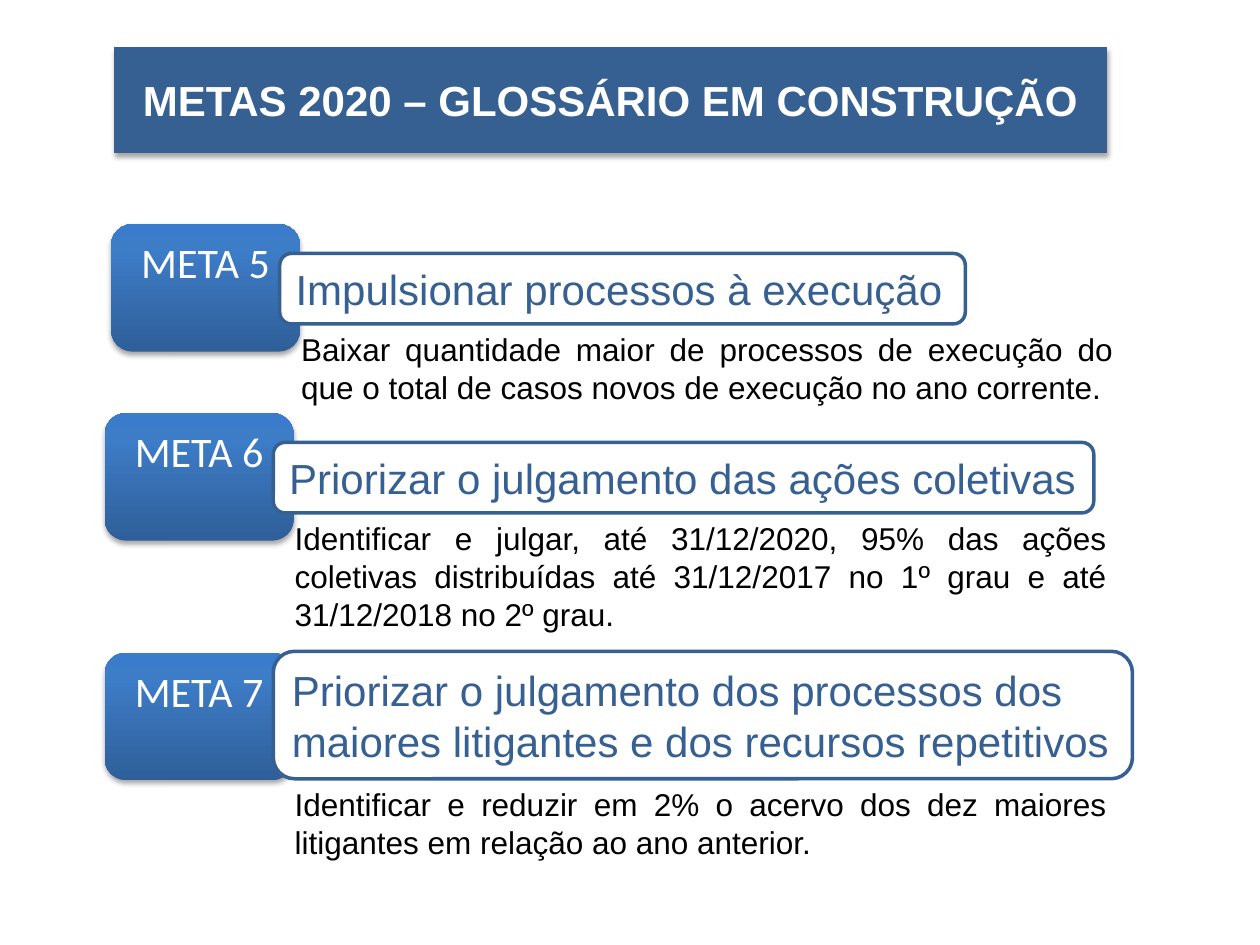
"""Build the 2020 goals glossary slide."""
from dataclasses import dataclass

from lxml.etree import SubElement
from pptx import Presentation
from pptx.dml.color import RGBColor
from pptx.enum.shapes import MSO_SHAPE
from pptx.enum.text import MSO_ANCHOR, MSO_AUTO_SIZE, PP_ALIGN
from pptx.oxml.ns import qn
from pptx.util import Cm, Pt

COLORS = {
    "navy": "376092",
    "white": "FFFFFF",
    "black": "000000",
    "badge_dark": "2F5F99",
    "badge_mid": "3D7CC7",
    "badge_light": "3A7CCB",
}
GRADIENT = ((0, "badge_dark"), (80, "badge_mid"), (100, "badge_light"))
BADGE_WIDTH, BADGE_HEIGHT = 3.81, 2.57
HEADING_INDENT, DETAIL_INDENT = 3.4, 3.58
DETAIL_WIDTH = 16.87


@dataclass(frozen=True)
class Goal:
    label: str
    heading: str
    detail: str
    left: float
    badge_top: float
    heading_top: float
    heading_width: float
    heading_height: float
    detail_height: float


GOALS = (
    Goal("META 5", "Impulsionar processos à execução",
         "Baixar quantidade maior de processos de execução do que o total "
         "de casos novos de execução no ano corrente.",
         2.24, 4.52, 5.11, 13.82, 1.42, 1.8),
    Goal("META 6", "Priorizar o julgamento das ações coletivas",
         "Identificar e julgar, até 31/12/2020, 95% das ações coletivas "
         "distribuídas até 31/12/2017 no 1º grau e até 31/12/2018 no 2º grau.",
         2.11, 8.33, 8.92, 16.54, 1.42, 2.57),
    Goal("META 7",
         "Priorizar o julgamento dos processos dos\n"
         "maiores litigantes e dos recursos repetitivos",
         "Identificar e reduzir em 2% o acervo dos dez maiores litigantes "
         "em relação ao ano anterior.",
         2.11, 13.16, 13.13, 17.32, 2.57, 1.8),
)


def rgb(name: str) -> RGBColor:
    return RGBColor.from_string(COLORS[name])


def write(box, text: str, *, color: str, size: float = 24, font: str = "Arial",
          bold: bool = False, align=PP_ALIGN.LEFT, anchor=MSO_ANCHOR.TOP,
          wrap: bool = True, fit=MSO_AUTO_SIZE.SHAPE_TO_FIT_TEXT) -> None:
    frame = box.text_frame
    frame.text = text
    frame.word_wrap = wrap
    frame.auto_size = fit
    frame.vertical_anchor = anchor
    for paragraph in frame.paragraphs:
        paragraph.alignment = align
        for span in paragraph.runs:
            span.font.name = font
            span.font.size = Pt(size)
            span.font.bold = bold
            span.font.color.rgb = rgb(color)


def paint(box, *, fill: str, line: str, width: float) -> None:
    box.fill.solid()
    box.fill.fore_color.rgb = rgb(fill)
    box.line.color.rgb = rgb(line)
    box.line.width = Pt(width)


def add_color(parent, name: str):
    return SubElement(parent, qn("a:srgbClr"), val=COLORS[name])


def cast_shadow(box) -> None:
    box.shadow.inherit = False
    effects = box.element.spPr.find(qn("a:effectLst"))
    shadow = SubElement(effects, qn("a:outerShdw"), blurRad=str(Pt(3.1)),
                        dist=str(Pt(1.8)), dir="5400000", rotWithShape="0")
    SubElement(add_color(shadow, "black"), qn("a:alpha"), val="35000")


def shade(box) -> None:
    box.fill.gradient()
    box.fill.gradient_angle = 90
    stops = box.element.spPr.find(qn("a:gradFill")).find(qn("a:gsLst"))
    for stop in list(stops):
        stops.remove(stop)
    for position, name in GRADIENT:
        add_color(SubElement(stops, qn("a:gs"), pos=str(position * 1000)), name)


def add_rounded(page, left: float, top: float, width: float, height: float):
    box = page.shapes.add_shape(MSO_SHAPE.ROUNDED_RECTANGLE,
                                Cm(left), Cm(top), Cm(width), Cm(height))
    box.shadow.inherit = False
    return box


def add_title(page, text: str) -> None:
    box = page.shapes.title
    box.left, box.top, box.width, box.height = Cm(2.31), Cm(1.3), Cm(19.99), Cm(1.42)
    geometry = SubElement(box.element.spPr, qn("a:prstGeom"), prst="roundRect")
    SubElement(geometry, qn("a:avLst"))
    paint(box, fill="navy", line="navy", width=0.75)
    cast_shadow(box)
    write(box, text, color="white", bold=True, align=PP_ALIGN.CENTER,
          anchor=MSO_ANCHOR.MIDDLE)


def add_goal(page, goal: Goal) -> None:
    badge = add_rounded(page, goal.left, goal.badge_top, BADGE_WIDTH, BADGE_HEIGHT)
    shade(badge)
    badge.line.fill.background()
    cast_shadow(badge)
    write(badge, goal.label, color="white", font="Calibri",
          align=PP_ALIGN.CENTER, fit=MSO_AUTO_SIZE.NONE)

    heading = add_rounded(page, goal.left + HEADING_INDENT, goal.heading_top,
                          goal.heading_width, goal.heading_height)
    paint(heading, fill="white", line="navy", width=2)
    write(heading, goal.heading, color="navy", anchor=MSO_ANCHOR.MIDDLE, wrap=False)

    detail = page.shapes.add_textbox(
        Cm(goal.left + DETAIL_INDENT), Cm(goal.heading_top + goal.heading_height),
        Cm(DETAIL_WIDTH), Cm(goal.detail_height))
    write(detail, goal.detail, color="black", size=18, align=PP_ALIGN.JUSTIFY)


def main() -> None:
    deck = Presentation()
    deck.slide_width, deck.slide_height = Cm(25.4), Cm(19.05)
    page = deck.slides.add_slide(deck.slide_layouts[5])
    add_title(page, "METAS 2020 – GLOSSÁRIO EM CONSTRUÇÃO")
    for goal in GOALS:
        add_goal(page, goal)
    deck.save("out.pptx")


if __name__ == "__main__":
    main()
